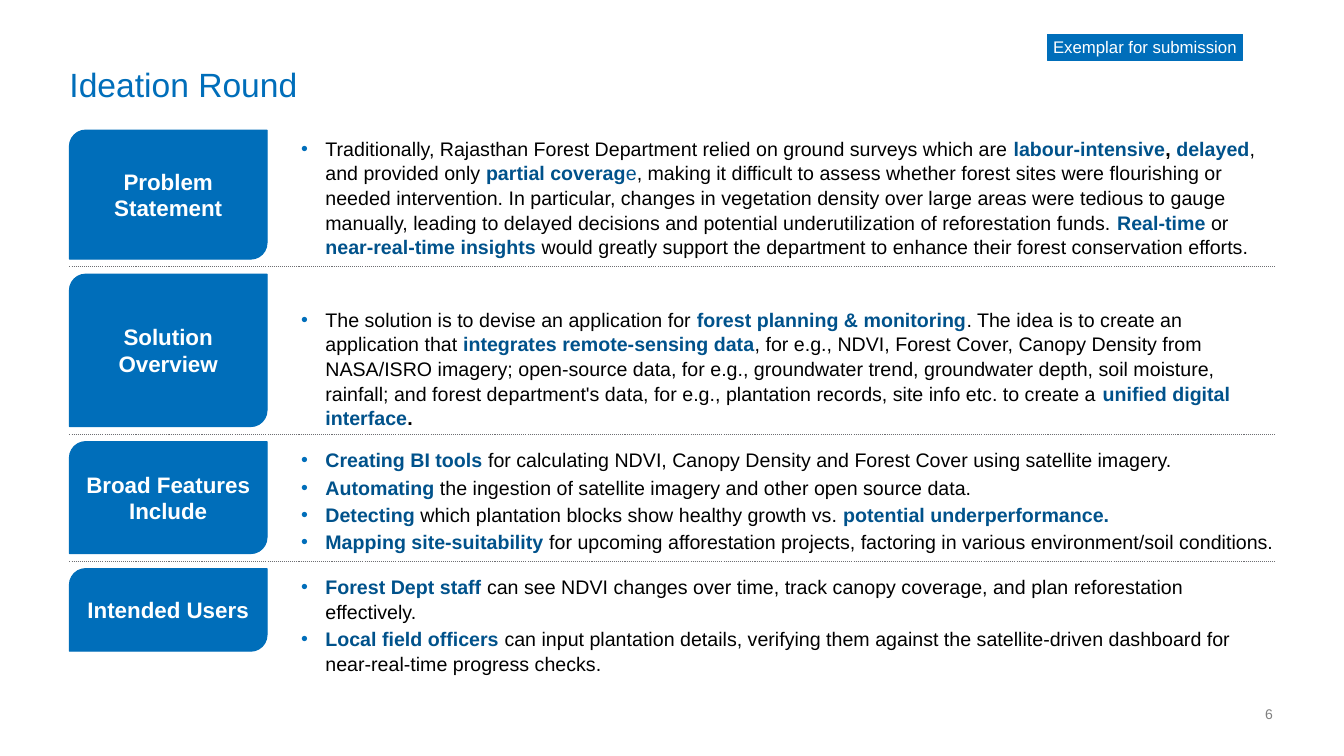
from lxml import etree
from pptx import Presentation
from pptx.dml.color import RGBColor
from pptx.enum.dml import MSO_LINE
from pptx.enum.shapes import MSO_CONNECTOR, MSO_SHAPE
from pptx.enum.text import MSO_ANCHOR, MSO_AUTO_SIZE, PP_ALIGN
from pptx.oxml.ns import qn
from pptx.util import Cm, Pt

RECT, ROUNDED = MSO_SHAPE.RECTANGLE, MSO_SHAPE.ROUND_2_DIAG_RECTANGLE
TOP, MIDDLE, BOTTOM = MSO_ANCHOR.TOP, MSO_ANCHOR.MIDDLE, MSO_ANCHOR.BOTTOM
LEFT, CENTER, RIGHT = PP_ALIGN.LEFT, PP_ALIGN.CENTER, PP_ALIGN.RIGHT
BLUE, NAVY, BLACK, WHITE = "006EBA", "00528B", "000000", "FFFFFF"
GREY, RULE = "808080", "6E6F73"

# Run styles: colour, bold
PLAIN, KEY = (BLACK, False), (NAVY, True)
BOLD, TINT = (BLACK, True), (NAVY, False)

# Content
TITLE = "Ideation Round"
TAG = "Exemplar for submission"
PAGE = "6"
# Each section: label, height, list width, space above the list (cm), bullets
SECTIONS = [
    ("Problem Statement", 3.25, 25.07, 0.13, [[
        ("Traditionally, Rajasthan Forest Department relied on ground surveys which are ", PLAIN),
        ("labour-intensive", KEY), (", ", BOLD), ("delayed", KEY),
        (", and provided only ", PLAIN), ("partial coverag", KEY), ("e", TINT),
        (", making it difficult to assess whether forest sites were flourishing or needed "
         "intervention. In particular, changes in vegetation density over large areas were "
         "tedious to gauge manually, leading to delayed decisions and potential "
         "underutilization of reforestation funds. ", PLAIN),
        ("Real-time", KEY), (" or ", PLAIN), ("near-real-time insights ", KEY),
        ("would greatly support the department to enhance their forest conservation efforts.", PLAIN),
    ]]),
    ("Solution Overview", 3.84, 25.07, 0.81, [[
        ("The solution is to devise an application for ", PLAIN),
        ("forest planning & monitoring", KEY),
        (". The idea is to create an application that ", PLAIN),
        ("integrates remote-sensing data", KEY),
        (", for e.g., NDVI, Forest Cover, Canopy Density from NASA/ISRO imagery; open-source "
         "data, for e.g., groundwater trend, groundwater depth, soil moisture, rainfall; and "
         "forest department's data, for e.g., plantation records, site info etc. to create a ", PLAIN),
        ("unified digital interface", KEY), (".", BOLD),
    ]]),
    ("Broad Features Include", 2.82, 25.45, 0.13, [
        [("Creating BI tools ", KEY),
         ("for calculating NDVI, Canopy Density and Forest Cover using satellite imagery.", PLAIN)],
        [("Automating", KEY),
         (" the ingestion of satellite imagery and other open source data.", PLAIN)],
        [("Detecting", KEY), (" which plantation blocks show healthy growth vs. ", PLAIN),
         ("potential underperformance.", KEY)],
        [("Mapping site-suitability ", KEY),
         ("for upcoming afforestation projects, factoring in various environment/soil conditions.", PLAIN)],
    ]),
    ("Intended Users", 2.08, 25.45, 0.13, [
        [("Forest Dept staff ", KEY),
         ("can see NDVI changes over time, track canopy coverage, and plan reforestation "
          "effectively.", PLAIN)],
        [("Local field officers ", KEY),
         ("can input plantation details, verifying them against the satellite-driven dashboard for "
          "\nnear-real-time progress checks.", PLAIN)],
    ]),
]

# Layout in cm
MARGIN, WIDTH = 1.75, 30.38
LABEL_W, LIST_X = 4.98, 7.06
FIRST_TOP, GAP, RADIUS = 3.28, 0.38, 0.41


def rgb(value):
    return RGBColor.from_string(value)


def style(font, size, color, bold=False):
    font.name, font.size, font.bold = "Arial", Pt(size), bold
    font.color.rgb = rgb(color)


def place(sp, x, y, w, h):
    sp.left, sp.top, sp.width, sp.height = Cm(x), Cm(y), Cm(w), Cm(h)


def write(sp, text, size, color, align, anchor, bold=False, inset=0.0):
    tf = sp.text_frame
    tf.text = text
    tf.word_wrap, tf.auto_size, tf.vertical_anchor = True, MSO_AUTO_SIZE.NONE, anchor
    tf.margin_left = tf.margin_right = tf.margin_top = tf.margin_bottom = Cm(inset)
    p = tf.paragraphs[0]
    p.alignment = align
    style(p.runs[0].font, size, color, bold)
    return p


def add_block(kind, x, y, w, h):
    sp = s.shapes.add_shape(kind, Cm(x), Cm(y), Cm(w), Cm(h))
    sp.shadow.inherit = False
    sp.fill.solid()
    sp.fill.fore_color.rgb = rgb(BLUE)
    sp.line.color.rgb = rgb(BLUE)
    sp.line.width = Pt(0.75)
    return sp


def add_divider(y):
    line = s.shapes.add_connector(MSO_CONNECTOR.STRAIGHT, Cm(MARGIN), Cm(y),
                                  Cm(MARGIN + WIDTH), Cm(y))
    line.line.color.rgb = rgb(RULE)
    line.line.width = Pt(0.75)
    line.line.dash_style = MSO_LINE.ROUND_DOT
    etree.SubElement(line._element.spPr, qn("a:effectLst"))


def add_bullet(p):
    pPr = p._p.get_or_add_pPr()
    pPr.set("marL", str(Cm(0.89)))
    pPr.set("indent", str(-Cm(0.61)))
    color = etree.SubElement(pPr, qn("a:buClr"))
    etree.SubElement(color, qn("a:srgbClr"), val=BLUE)
    etree.SubElement(pPr, qn("a:buFont"), typeface="Arial")
    etree.SubElement(pPr, qn("a:buChar"), char="•")


def fill_list(sp, bullets, space_above):
    tf = sp.text_frame
    tf.word_wrap, tf.auto_size, tf.vertical_anchor = True, MSO_AUTO_SIZE.NONE, TOP
    tf.margin_left = tf.margin_right = Cm(0.25)
    tf.margin_top, tf.margin_bottom = Cm(space_above), Cm(0.13)
    for i, pieces in enumerate(bullets):
        p = tf.add_paragraph() if i else tf.paragraphs[0]
        add_bullet(p)
        p.alignment, p.line_spacing = LEFT, 1.05
        p.space_before, p.space_after = Pt(1 if i else 0), Pt(1)
        for text, (color, bold) in pieces:
            for j, part in enumerate(text.split("\n")):
                if j:
                    p.add_line_break()
                r = p.add_run()
                r.text = part
                style(r.font, 14, color, bold)


prs = Presentation()
prs.slide_width, prs.slide_height = Cm(33.87), Cm(19.05)
s = prs.slides.add_slide(prs.slide_layouts.get_by_name("Comparison"))

# Title, tag and page number
title = s.shapes.title
place(title, MARGIN, 1.73, WIDTH, 0.91)
write(title, TITLE, 24, BLUE, LEFT, TOP).line_spacing = 0.9
write(add_block(RECT, 26.39, 0.86, 4.93, 0.66), TAG, 12, WHITE, CENTER, MIDDLE)
page = s.shapes.add_textbox(Cm(31.01), Cm(17.78), Cm(1.07), Cm(0.43))
write(page, PAGE, 10, GREY, RIGHT, BOTTOM)

# Sections: label, list, and a divider in the gap below all but the last
top = FIRST_TOP
for n, (label, height, list_w, space_above, bullets) in enumerate(SECTIONS, 1):
    block = add_block(ROUNDED, MARGIN, top, LABEL_W, height)
    block.adjustments[0], block.adjustments[1] = RADIUS / height, 0
    write(block, label, 16, WHITE, CENTER, MIDDLE, bold=True, inset=0.25)
    body = s.placeholders[n]
    place(body, LIST_X, top, list_w, height)
    fill_list(body, bullets, space_above)
    top += height + GAP
    if n < len(SECTIONS):
        add_divider(top - GAP / 2)

# Remove placeholders left empty
for ph in list(s.placeholders):
    if not ph.text_frame.text:
        ph._element.getparent().remove(ph._element)

prs.save("out.pptx")
